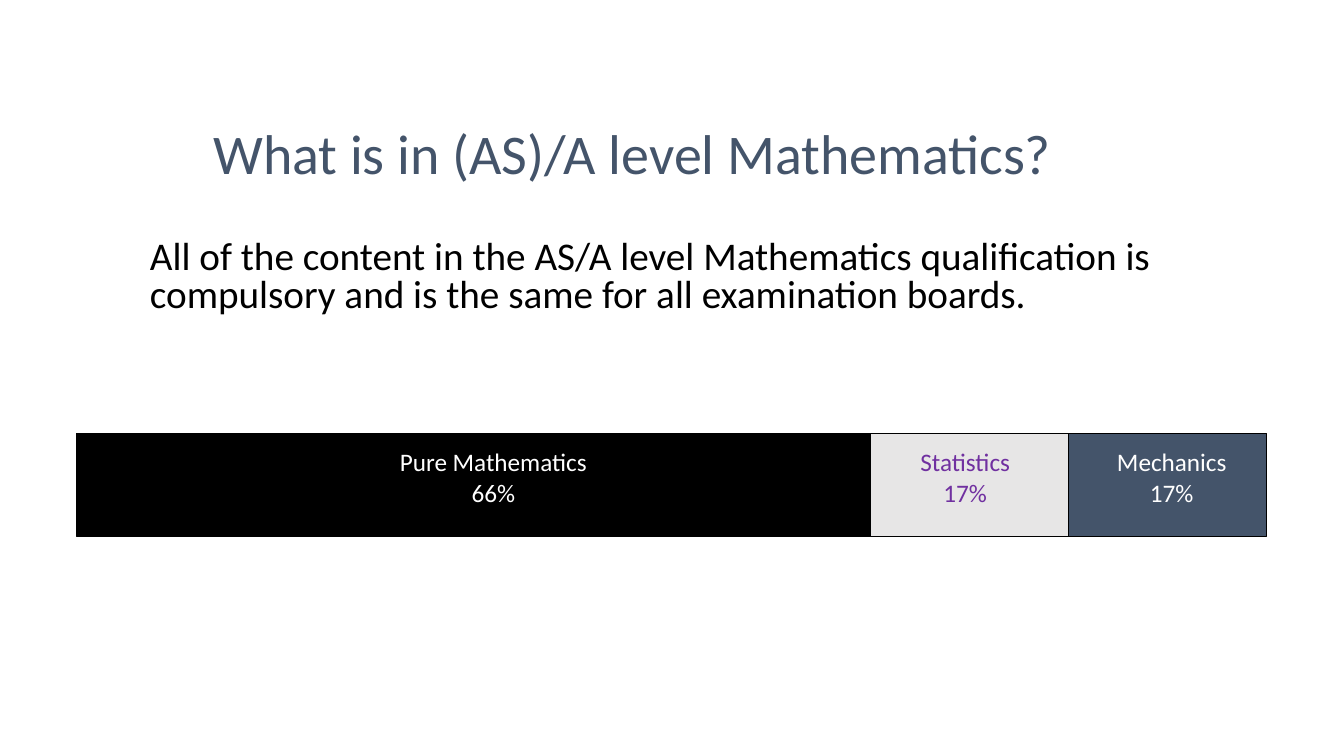
from pptx import Presentation
from pptx.dml.color import RGBColor
from pptx.enum.shapes import MSO_SHAPE as Shape
from pptx.enum.text import MSO_ANCHOR as Anchor, PP_ALIGN as Align
from pptx.util import Cm, Pt

LEFT, TOP, WIDTH, HEIGHT = 1.93, 10.92, 30, 2.59
UNITS = 6
PARTS = [
    ("Pure Mathematics", "66%", 4, "000000", "FFFFFF", 8.13, 8.61),
    ("Statistics", "17%", 1, "E7E6E6", "7030A0", 22.33, 3.99),
    ("Mechanics", "17%", 1, "44546A", "FFFFFF", 27.13, 4.8),
]


def color(code):
    return RGBColor.from_string(code)


def add_text(slide, box, lines, size, ink, align=Align.LEFT, anchor=Anchor.TOP, space=1.0):
    frame = slide.shapes.add_textbox(*map(Cm, box)).text_frame
    frame.word_wrap = True
    frame.vertical_anchor = anchor
    frame.text = "\n".join(lines)
    for para in frame.paragraphs:
        para.alignment = align
        para.line_spacing = space
        para.font.name = "Calibri"
        para.font.size = Pt(size)
        para.font.color.rgb = color(ink)


def add_block(slide, box, fill):
    block = slide.shapes.add_shape(Shape.RECTANGLE, *map(Cm, box))
    block.shadow.inherit = False
    block.fill.solid()
    block.fill.fore_color.rgb = color(fill)
    block.line.color.rgb = color("000000")
    block.line.width = Pt(0.75)


def add_bar(slide):
    left = LEFT
    for name, share, units, fill, ink, start, span in PARTS:
        width = WIDTH * units / UNITS
        add_block(slide, (left, TOP, width, HEIGHT), fill)
        add_text(slide, (start, 11.13, span, 1.8), [name, share], 18, ink, Align.CENTER)
        left += width


def main():
    deck = Presentation()
    deck.slide_width, deck.slide_height = Cm(33.87), Cm(19.05)
    slide = deck.slides.add_slide(deck.slide_layouts[6])
    add_text(slide, (5.13, 2.95, 23.42, 1.96), ["What is in (AS)/A level Mathematics?"],
             40, "44546A", anchor=Anchor.MIDDLE, space=0.9)
    add_text(slide, (3.53, 5.94, 27, 2.39),
             ["All of the content in the AS/A level Mathematics qualification is "
              "compulsory and is the same for all examination boards."],
             28, "000000", space=0.8)
    add_bar(slide)
    deck.save("out.pptx")


if __name__ == "__main__":
    main()
